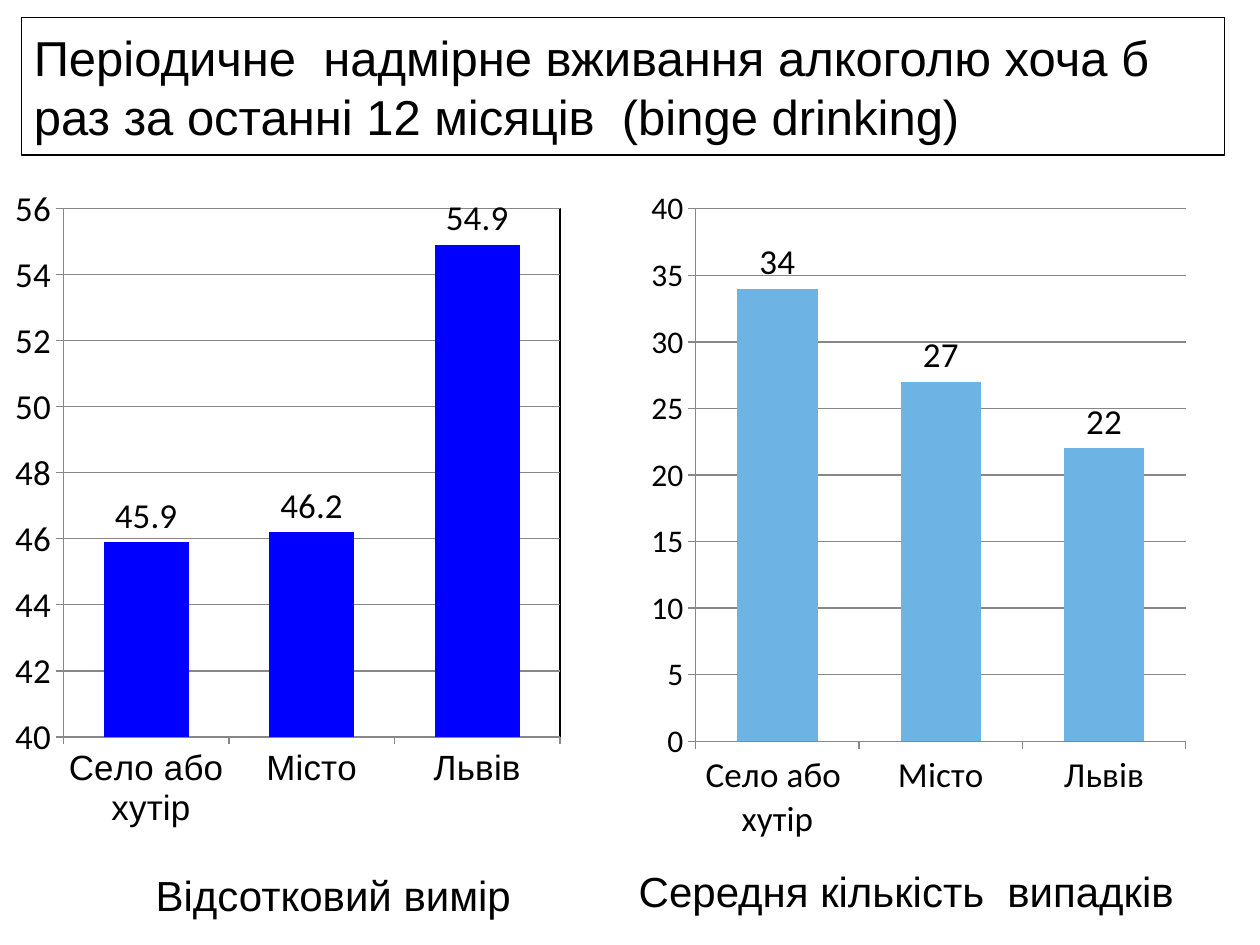
import pptx
import pptx.chart.data
import pptx.dml.color
import pptx.enum.chart
import pptx.enum.text
import pptx.oxml
import pptx.util
from pptx.oxml.ns import nsdecls

RGBColor = pptx.dml.color.RGBColor
BLACK = RGBColor(0, 0, 0)
AXIS_GRAY = RGBColor(0x87, 0x87, 0x87)
BLUE = RGBColor(0, 0, 0xFF)
SKY = RGBColor(0x6D, 0xB4, 0xE4)

WIDTH = pptx.util.Inches(10)
HEIGHT = pptx.util.Inches(7.5)
PLACES = ["Село або  хутір", "Місто", "Львів"]


def inches(*lengths):
    return [pptx.util.Inches(length) for length in lengths]


def set_font(font, size, name):
    font.size = pptx.util.Pt(size)
    font.name = name
    font.color.rgb = BLACK


def add_text(slide, box, wording, size, align, anchor):
    label = slide.shapes.add_textbox(*inches(*box))
    frame = label.text_frame
    frame.word_wrap = True
    frame.vertical_anchor = anchor
    paragraph = frame.paragraphs[0]
    paragraph.alignment = align
    run = paragraph.add_run()
    run.text = wording
    set_font(run.font, size, "Arial")
    return label


def add_title(slide, box, wording):
    title = add_text(slide, box, wording, 28, pptx.enum.text.PP_ALIGN.LEFT,
                     pptx.enum.text.MSO_ANCHOR.MIDDLE)
    title.line.color.rgb = BLACK
    title.line.width = pptx.util.Pt(0.75)


def add_caption(slide, box, wording):
    add_text(slide, box, wording, 24, pptx.enum.text.PP_ALIGN.CENTER,
             pptx.enum.text.MSO_ANCHOR.TOP)


def place_plot(chart, x, y, w, h):
    plot_area = chart._chartSpace.chart.plotArea
    for old in plot_area.findall(pptx.oxml.ns.qn("c:layout")):
        plot_area.remove(old)
    shares = "".join(f'<c:{tag} val="{share}"/>'
                     for tag, share in zip("xywh", (x, y, w, h)))
    plot_area.insert(0, pptx.oxml.parse_xml(
        f'<c:layout {nsdecls("c")}><c:manualLayout><c:layoutTarget val="inner"/>'
        f'<c:xMode val="edge"/><c:yMode val="edge"/>{shares}'
        '</c:manualLayout></c:layout>'))


def outline_plot(chart):
    chart._chartSpace.chart.plotArea.append(pptx.oxml.parse_xml(
        f'<c:spPr {nsdecls("c", "a")}><a:noFill/><a:ln w="9525"><a:solidFill>'
        f'<a:srgbClr val="{BLACK}"/></a:solidFill></a:ln></c:spPr>'))


def style_axis(axis, size, font_name):
    axis.major_tick_mark = pptx.enum.chart.XL_TICK_MARK.OUTSIDE
    axis.minor_tick_mark = pptx.enum.chart.XL_TICK_MARK.NONE
    axis.format.line.color.rgb = AXIS_GRAY
    set_font(axis.tick_labels.font, size, font_name)


def add_columns(slide, box, plot_box, counts, color, gap, scale,
                number_format, place_font, scale_size):
    data = pptx.chart.data.CategoryChartData()
    data.categories = PLACES
    data.add_series("Series 1", counts)
    chart = slide.shapes.add_chart(
        pptx.enum.chart.XL_CHART_TYPE.COLUMN_CLUSTERED, *inches(*box), data).chart
    chart.has_legend = False
    chart.has_title = False
    set_font(chart.font, 18, "Calibri")
    place_plot(chart, *plot_box)

    style_axis(chart.category_axis, 20, place_font)
    scale_axis = chart.value_axis
    style_axis(scale_axis, scale_size, "Calibri")
    scale_axis.minimum_scale, scale_axis.maximum_scale, scale_axis.major_unit = scale
    scale_axis.tick_labels.number_format = "0"
    scale_axis.tick_labels.number_format_is_linked = False
    scale_axis.major_gridlines.format.line.color.rgb = AXIS_GRAY

    columns = chart.plots[0]
    columns.vary_by_categories = False
    columns.gap_width = gap
    fill = columns.series[0].format.fill
    fill.solid()
    fill.fore_color.rgb = color
    labels = columns.series[0].data_labels
    labels.show_value = True
    labels.position = pptx.enum.chart.XL_LABEL_POSITION.OUTSIDE_END
    labels.number_format = number_format
    labels.number_format_is_linked = False
    set_font(labels.font, 20, "Calibri")
    return chart


def main():
    deck = pptx.Presentation()
    deck.slide_width, deck.slide_height = WIDTH, HEIGHT
    slide = deck.slides.add_slide(deck.slide_layouts[6])

    add_title(slide, (0.17, 0.14, 9.55, 1.09),
              "Періодичне  надмірне вживання алкоголю хоча б раз "
              "за останні 12 місяців  (binge drinking)")
    percent = add_columns(slide, (0.12, 1.39, 4.65, 5.31), (0.08, 0.05, 0.85, 0.79),
                          (45.9, 46.2, 54.9), BLUE, 95, (40, 56, 2),
                          "General", "Arial", 20)
    outline_plot(percent)
    add_columns(slide, (5.08, 1.39, 4.42, 5.35), (0.1, 0.05, 0.88, 0.79),
                (34, 27, 22), SKY, 103, (0, 40, 5), "#,##0", "Calibri", 18)
    add_caption(slide, (0.67, 6.85, 3.86, 0.5), " Відсотковий вимір")
    add_caption(slide, (4.76, 6.82, 4.96, 0.5), "Середня кількість  випадків ")

    deck.save("out.pptx")


if __name__ == "__main__":
    main()
